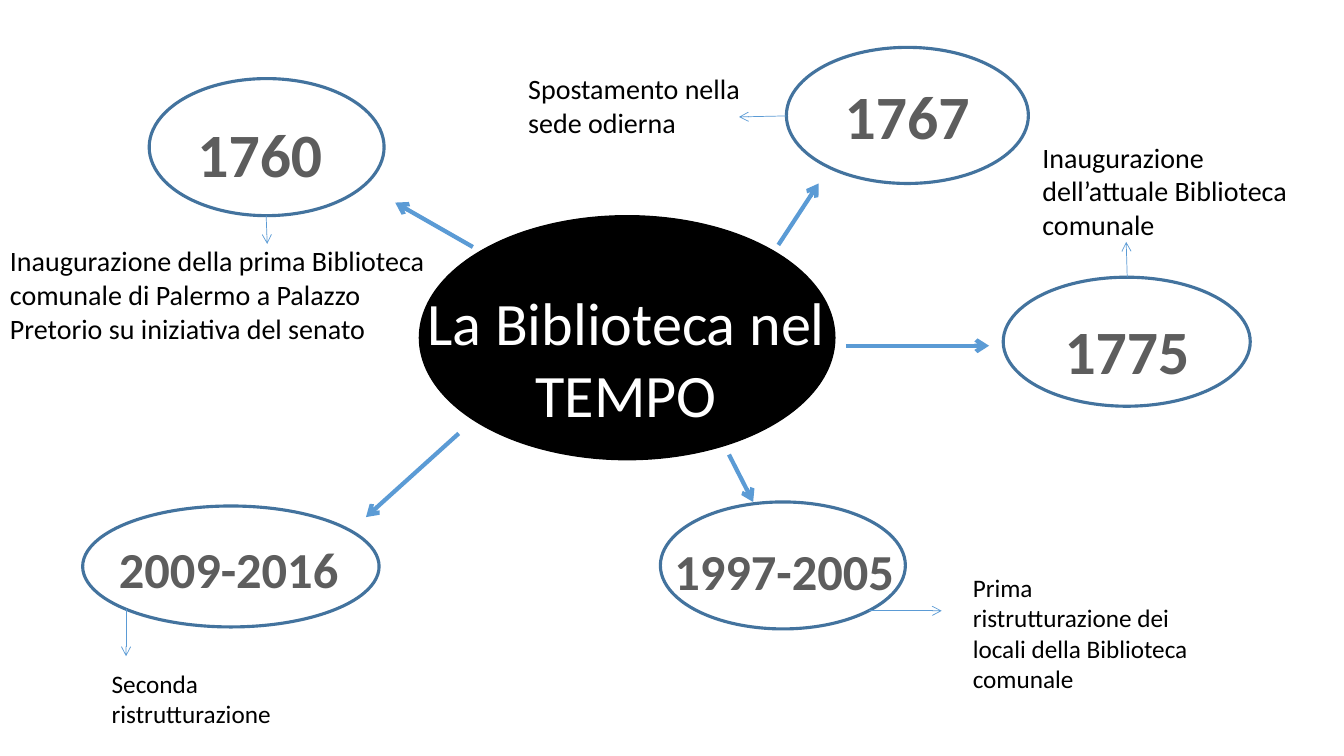
import pptx
import pptx.util
import pptx.dml.color
import pptx.enum.shapes
import pptx.enum.text
import pptx.oxml

Inches, Pt = pptx.util.Inches, pptx.util.Pt
ALIGN = pptx.enum.text.PP_ALIGN

THEME = {
    "font": "Calibri",
    "white": "FFFFFF", "black": "000000", "gray": "5D5D5D",
    "ring": "43739E", "blue": "5B9BD5",
    "title": 43, "year": 44, "span": 36, "note": 20, "small": 18,
    "edge": 2.25, "thick": 3, "thin": 0.5,
}

# Content: boxes are (left, top, width, height), arrows (x1, y1, x2, y2)
TITLE = "La Biblioteca nel\nTEMPO"
TITLE_BOX = (3.12, 2.78, 6.18, 1.58)
HUB = (4.16, 2.14, 4.12, 2.42)

EVENTS = [
    {"year": "1760", "size": "year", "ring": (1.48, 0.78, 2.33, 1.36),
     "label": (1.86, 1.1, 1.67, 0.84),
     "note": "Inaugurazione della prima Biblioteca comunale di Palermo "
             "a Palazzo Pretorio su iniziativa del senato",
     "type": "note", "text": (0, 2.37, 4.39, 1.11),
     "spoke": (4.69, 2.45, 3.92, 2.01), "lead": (2.64, 2.14, 2.65, 2.42)},
    {"year": "1767", "size": "year", "ring": (7.8, 0.47, 2.4, 1.35),
     "label": (8.28, 0.72, 1.53, 0.84),
     "note": "Spostamento nella sede odierna",
     "type": "note", "text": (5.14, 0.66, 2.54, 0.77),
     "spoke": (7.72, 2.43, 8.12, 1.82), "lead": (7.8, 1.15, 7.33, 1.16)},
    {"year": "1775", "size": "year", "ring": (9.95, 2.75, 2.45, 1.28),
     "label": (10.46, 3.06, 1.83, 0.84),
     "note": "Inaugurazione dell’attuale Biblioteca comunale",
     "type": "note", "text": (10.24, 1.34, 3.1, 1.11),
     "spoke": (8.39, 3.43, 9.81, 3.43), "lead": (11.18, 2.75, 11.17, 2.4)},
    {"year": "1997-2005", "size": "span", "ring": (6.55, 4.98, 2.43, 1.26),
     "label": (6.59, 5.31, 2.45, 0.71),
     "note": "Prima ristrutturazione dei locali della Biblioteca comunale",
     "type": "small", "text": (9.55, 5.63, 2.4, 1.31),
     "spoke": (7.23, 4.51, 7.47, 4.98), "lead": (8.62, 6.06, 9.34, 6.06)},
    {"year": "2009-2016", "size": "span", "ring": (0.82, 5.02, 2.94, 1.2),
     "label": (1.08, 5.29, 3.07, 0.71),
     "note": "Seconda ristrutturazione",
     "type": "small", "text": (1.01, 6.58, 2.33, 0.71),
     "spoke": (4.55, 4.3, 3.63, 5.13), "lead": (1.25, 6.04, 1.25, 6.51)},
]


def tint(name):
    return pptx.dml.color.RGBColor.from_string(THEME[name])


def apply(target, values):
    for name, value in values.items():
        setattr(target, name, value)


def write(shape, text, size, color, bold=False, align=ALIGN.LEFT):
    frame = shape.text_frame
    frame.text = text
    apply(frame, {"word_wrap": True,
                  "auto_size": pptx.enum.text.MSO_AUTO_SIZE.NONE,
                  "vertical_anchor": pptx.enum.text.MSO_ANCHOR.TOP})
    for para in frame.paragraphs:
        apply(para, {"alignment": align, "line_spacing": 1.0})
        for run in para.runs:
            apply(run.font, {"name": THEME["font"], "size": Pt(THEME[size]),
                             "bold": bold})
            run.font.color.rgb = tint(color)


def add_text(slide, box, *style):
    write(slide.shapes.add_textbox(*map(Inches, box)), *style)


def add_oval(slide, box, line, width, fill=None):
    oval = slide.shapes.add_shape(
        pptx.enum.shapes.MSO_SHAPE.OVAL, *map(Inches, box))
    oval.shadow.inherit = False
    if fill:
        oval.fill.solid()
        oval.fill.fore_color.rgb = tint(fill)
    else:
        oval.fill.background()
    oval.line.color.rgb = tint(line)
    oval.line.width = Pt(width)


def add_arrow(slide, ends, width):
    arrow = slide.shapes.add_connector(
        pptx.enum.shapes.MSO_CONNECTOR.STRAIGHT, *map(Inches, ends))
    arrow.line.color.rgb = tint("blue")
    arrow.line.width = Pt(THEME[width])
    space = pptx.oxml.ns.nsdecls("a")
    line = arrow.line._get_or_add_ln()
    line.append(pptx.oxml.parse_xml(f'<a:tailEnd {space} type="arrow"/>'))
    line.getparent().append(pptx.oxml.parse_xml(f"<a:effectLst {space}/>"))


def main():
    deck = pptx.Presentation()
    apply(deck, {"slide_width": Inches(13.33), "slide_height": Inches(7.5)})
    slide = deck.slides.add_slide(deck.slide_layouts[5])

    # Hub and title, with the title brought in front of the hub
    add_oval(slide, HUB, "black", 1, "black")
    title = slide.shapes.title
    left, top, width, height = map(Inches, TITLE_BOX)
    apply(title, {"left": left, "top": top, "width": width, "height": height})
    write(title, TITLE, "title", "white", align=ALIGN.CENTER)
    title.element.getparent().append(title.element)

    # Years around the hub, each with its note and arrows
    for event in EVENTS:
        add_oval(slide, event["ring"], "ring", THEME["edge"])
        add_arrow(slide, event["spoke"], "thick")
        add_text(slide, event["label"], event["year"], event["size"],
                 "gray", True)
        add_text(slide, event["text"], event["note"], event["type"], "black")
        add_arrow(slide, event["lead"], "thin")

    deck.save("out.pptx")


if __name__ == "__main__":
    main()
